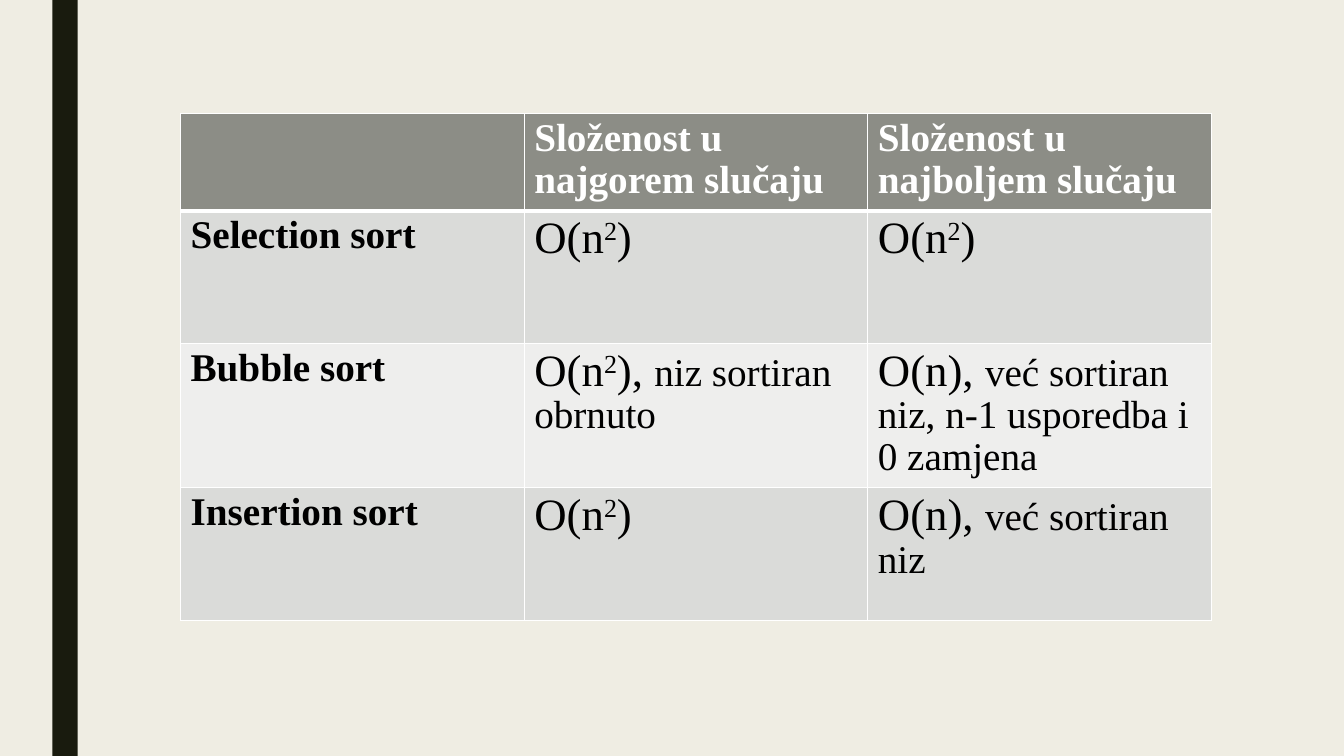
from lxml import etree
from pptx import Presentation
from pptx.dml.color import RGBColor
from pptx.enum.shapes import MSO_SHAPE
from pptx.oxml.ns import qn
from pptx.util import Cm, Pt

RECTANGLE = MSO_SHAPE.RECTANGLE

LARGE, NORMAL = 32, 28
COLUMN_WIDTH = 8.66
ROW_HEIGHTS = [2.44, 3.35, 3.63, 3.35]

# A cell is a list of (text, size) pieces; "^" wraps superscript text.
QUADRATIC = [("O(n^2^)", LARGE)]
COMPLEXITIES = [
    [[],
     [("Složenost u najgorem slučaju", NORMAL)],
     [("Složenost u najboljem slučaju", NORMAL)]],
    [[("Selection sort", NORMAL)], QUADRATIC, QUADRATIC],
    [[("Bubble sort", NORMAL)],
     [("O(n^2^), ", LARGE), ("niz sortiran obrnuto", NORMAL)],
     [("O(n), ", LARGE),
      ("već sortiran niz, n-1 usporedba i 0 zamjena", NORMAL)]],
    [[("Insertion sort", NORMAL)],
     QUADRATIC,
     [("O(n), ", LARGE), ("već sortiran niz", NORMAL)]],
]


def color(value):
    return RGBColor.from_string(value)


class ComplexitySlide:
    FONT = "Times New Roman"
    BACKGROUND, ACCENT = "EFEDE3", "191B0E"
    WHITE, BLACK = "FFFFFF", "000000"
    HEADER, BANDS = "8C8D86", ("EEEEED", "DADBD9")

    def __init__(self, presentation):
        self.slide = presentation.slides.add_slide(presentation.slide_layouts[6])
        fill = self.slide.background.fill
        fill.solid()
        fill.fore_color.rgb = color(self.BACKGROUND)

    def bar(self, left, top, width, height):
        bar = self.slide.shapes.add_shape(
            RECTANGLE, Cm(left), Cm(top), Cm(width), Cm(height))
        bar.shadow.inherit = False
        bar.fill.solid()
        bar.fill.fore_color.rgb = color(self.ACCENT)
        bar.line.fill.background()

    def table(self, left, top, rows, column_width, row_heights):
        columns = len(rows[0])
        table = self.slide.shapes.add_table(
            len(rows), columns, Cm(left), Cm(top),
            Cm(column_width * columns), Cm(sum(row_heights))).table
        for column in table.columns:
            column.width = Cm(column_width)
        for i, (row, height) in enumerate(zip(rows, row_heights)):
            table.rows[i].height = Cm(height)
            for j, pieces in enumerate(row):
                cell = table.cell(i, j)
                self.cell_text(cell, pieces, i == 0, i == 0 or j == 0)
                self.cell_borders(cell, top=3 if i == 1 else 1,
                                  bottom=3 if i == 0 else 1)
                cell.fill.solid()
                cell.fill.fore_color.rgb = color(
                    self.HEADER if i == 0 else self.BANDS[i % 2])

    def cell_text(self, cell, pieces, is_header, bold):
        paragraph = cell.text_frame.paragraphs[0]
        paragraph.line_spacing = 0.95
        font = paragraph.font
        font.name = self.FONT
        font.bold = bold
        font.color.rgb = color(self.WHITE if is_header else self.BLACK)
        for text, size in pieces:
            for k, part in enumerate(text.split("^")):
                run = paragraph.add_run()
                run.text = part
                run.font.size = Pt(size)
                if k % 2:
                    run._r.get_or_add_rPr().set("baseline", "30000")

    def cell_borders(self, cell, top, bottom):
        properties = cell._tc.get_or_add_tcPr()
        widths = {"a:lnL": 1, "a:lnR": 1, "a:lnT": top, "a:lnB": bottom}
        for side, width in widths.items():
            line = etree.SubElement(properties, qn(side), w=str(Pt(width)))
            fill = etree.SubElement(line, qn("a:solidFill"))
            etree.SubElement(fill, qn("a:srgbClr"), val=self.WHITE)


def main():
    presentation = Presentation()
    presentation.slide_width = Cm(33.87)
    presentation.slide_height = Cm(19.05)
    slide = ComplexitySlide(presentation)
    slide.bar(1.32, 0, 0.64, 19.05)
    slide.table(4.55, 2.87, COMPLEXITIES, COLUMN_WIDTH, ROW_HEIGHTS)
    presentation.save("out.pptx")


if __name__ == "__main__":
    main()
